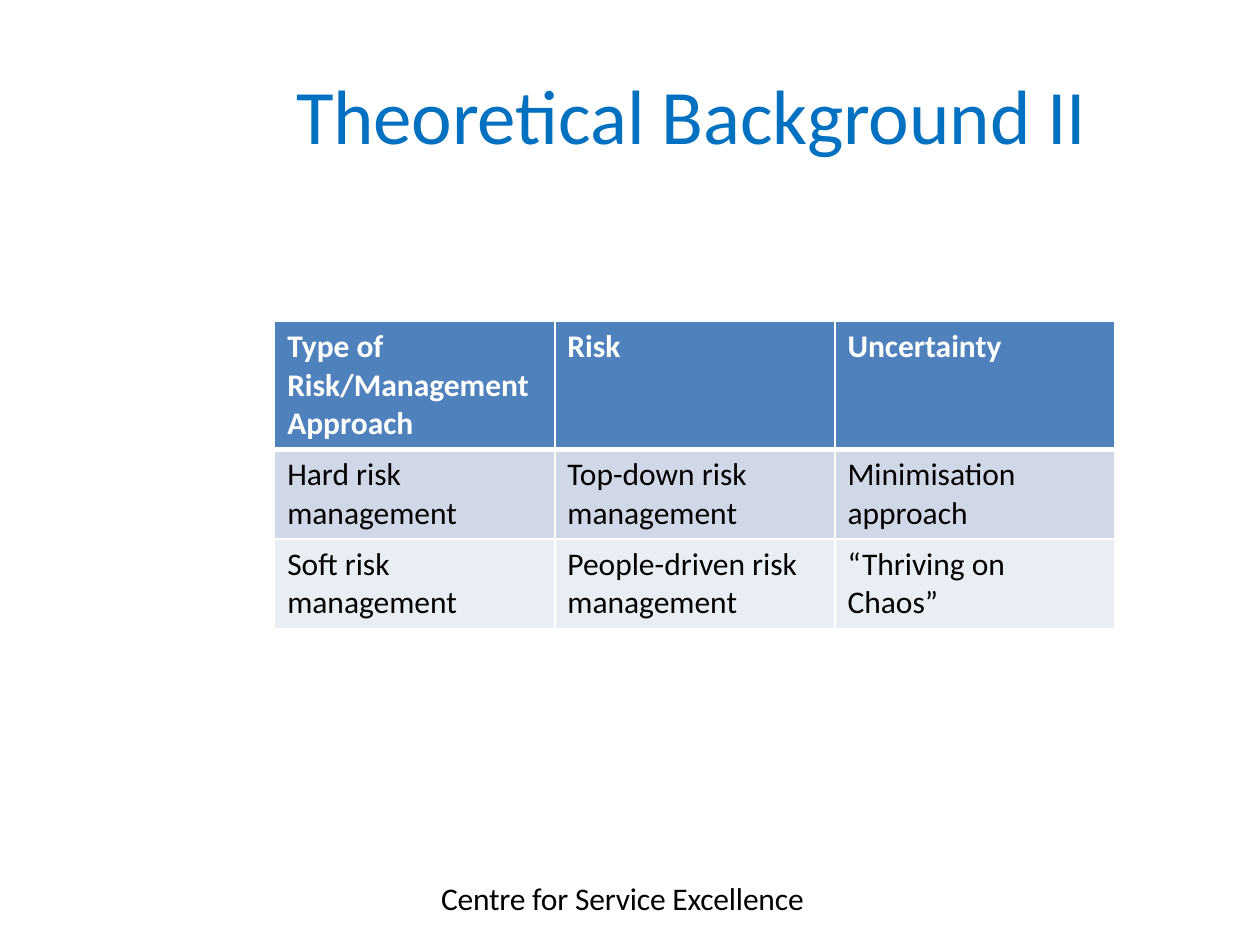
from lxml import etree
from pptx import Presentation
from pptx.dml.color import RGBColor
from pptx.enum.text import MSO_ANCHOR, PP_ALIGN
from pptx.oxml.ns import qn
from pptx.util import Inches, Pt

TOP = MSO_ANCHOR.TOP
LEFT = PP_ALIGN.LEFT
TITLE_ONLY = 5
WIDTH, HEIGHT = 10, 7.5
COLORS = {
    "title": "0070C0",
    "text": "000000",
    "white": "FFFFFF",
    "header": "4F81BD",
    "band": "D0D8E8",
    "light": "E9EDF4",
}
RISK_ROWS = [
    ["Type of Risk/Management Approach", "Risk", "Uncertainty"],
    ["Hard risk management", "Top-down risk management", "Minimisation approach"],
    ["Soft risk management", "People-driven risk management", "“Thriving on Chaos”"],
]


def write_text(frame, text, size=18, color="text", bold=False, spacing=0, line=None):
    para = frame.paragraphs[0]
    para.alignment = LEFT
    if line:
        para.line_spacing = Pt(line)
    span = para.add_run()
    span.text = text
    span.font.name = "Calibri"
    span.font.size = Pt(size)
    span.font.bold = bold
    span.font.color.rgb = RGBColor.from_string(COLORS[color])
    if spacing:
        span.font._element.set("spc", str(round(spacing * 100)))


def draw_border(cell, side, width):
    border = etree.SubElement(cell._tc.get_or_add_tcPr(), qn(f"a:{side}"), w=str(Pt(width)))
    fill = etree.SubElement(border, qn("a:solidFill"))
    etree.SubElement(fill, qn("a:srgbClr"), val=COLORS["white"])


class SlideBuilder:
    def __init__(self, deck):
        self.page = deck.slides.add_slide(deck.slide_layouts[TITLE_ONLY])

    def area(self, left, top, width, height):
        return (Inches(left * WIDTH), Inches(top * HEIGHT),
                Inches(width * WIDTH), Inches(height * HEIGHT))

    def prepare_frame(self, box):
        frame = box.text_frame
        frame.margin_left = frame.margin_right = 0
        frame.margin_top = frame.margin_bottom = 0
        frame.vertical_anchor = TOP
        frame.word_wrap = True
        return frame

    def title(self, text, left, top, width, height):
        box = self.page.shapes.title
        box.left, box.top, box.width, box.height = self.area(left, top, width, height)
        frame = self.prepare_frame(box)
        frame.margin_top = Inches(0.01)
        write_text(frame, text, size=44, color="title", spacing=-0.1)

    def label(self, text, left, top, width, height):
        box = self.page.shapes.add_textbox(*self.area(left, top, width, height))
        write_text(self.prepare_frame(box), text, spacing=-0.1, line=18.1)

    def table(self, rows, left, top, width, height):
        table = self.page.shapes.add_table(
            len(rows), len(rows[0]), *self.area(left, top, width, height)).table
        for row_index, row in enumerate(rows):
            header = row_index == 0
            fill = "header" if header else ("light", "band")[row_index % 2]
            for column_index, text in enumerate(row):
                cell = table.cell(row_index, column_index)
                for side in ("lnL", "lnR", "lnT", "lnB"):
                    heavy = (row_index, side) in ((0, "lnB"), (1, "lnT"))
                    draw_border(cell, side, 3 if heavy else 1)
                cell.fill.solid()
                cell.fill.fore_color.rgb = RGBColor.from_string(COLORS[fill])
                write_text(cell.text_frame, text, bold=header,
                           color="white" if header else "text")


def main():
    deck = Presentation()
    deck.slide_width, deck.slide_height = Inches(WIDTH), Inches(HEIGHT)
    builder = SlideBuilder(deck)
    builder.title("Theoretical Background II", 0.235, 0.07, 0.634, 0.1)
    builder.table(RISK_ROWS, 0.218, 0.34, 0.667, 0.16)
    builder.label("Centre for Service Excellence", 0.35, 0.937, 0.295, 0.037)
    deck.save("out.pptx")


if __name__ == "__main__":
    main()
